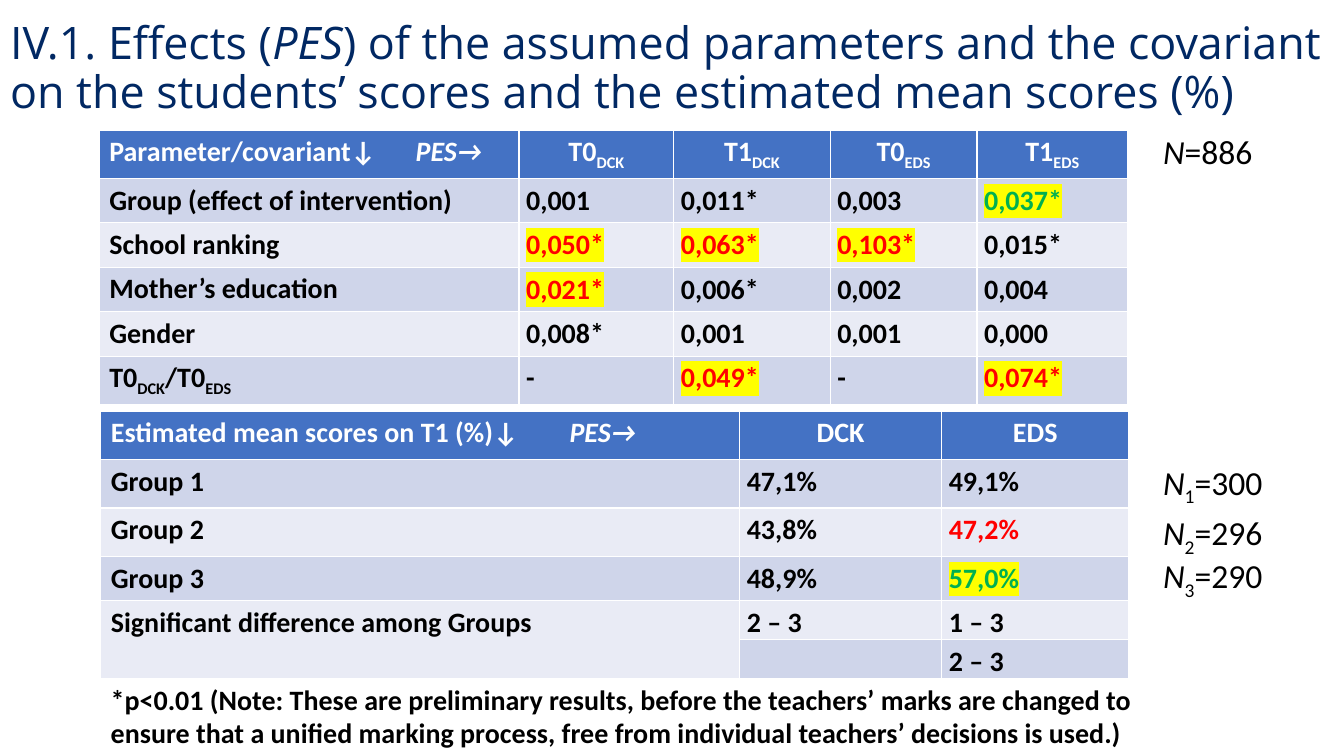
from lxml import etree
from pptx import Presentation
from pptx.dml.color import RGBColor
from pptx.enum.text import MSO_ANCHOR, MSO_AUTO_SIZE as AutoSize, PP_ALIGN as Align
from pptx.oxml.ns import qn
from pptx.util import Cm, Pt

COLORS = {
    "navy": "012863", "header": "4472C4", "band_dark": "CFD5EA", "band_light": "E9EBF5",
    "white": "FFFFFF", "black": "000000", "red": "FF0000", "green": "00B050", "yellow": "FFFF00",
}
ITALIC = {"italic": True}
SUBSCRIPT = {"subscript": True}


def marked(text, color, highlight="yellow"):
    return [(text, {"color": color, "highlight": highlight})]


def score_label(prefix, test):
    return [prefix, (test, SUBSCRIPT)]


def add_run(paragraph, text, size=20, font="Calibri", color="black", bold=False,
            italic=False, subscript=False, highlight=None):
    run = paragraph.add_run()
    run.text = text
    run.font.size = Pt(size)
    run.font.name = font
    run.font.bold = bold
    run.font.italic = italic
    run.font.color.rgb = RGBColor.from_string(COLORS[color])
    properties = run._r.get_or_add_rPr()
    if subscript:
        properties.set("baseline", "-25000")
    if highlight:
        element = etree.Element(qn("a:highlight"))
        etree.SubElement(element, qn("a:srgbClr"), val=COLORS[highlight])
        properties.find(qn("a:solidFill")).addnext(element)


def write_text(frame, parts, align=Align.LEFT, line_spacing=None, space_after=None,
               tab=None, **style):
    paragraph = frame.paragraphs[0]
    paragraph.alignment = align
    if line_spacing:
        paragraph.line_spacing = line_spacing
    if space_after:
        paragraph.space_after = Pt(space_after)
    if tab:
        tabs = etree.SubElement(paragraph._p.get_or_add_pPr(), qn("a:tabLst"))
        etree.SubElement(tabs, qn("a:tab"), pos=str(Cm(tab)), algn="l")
    for part in [parts] if isinstance(parts, str) else parts:
        text, extra = (part, {}) if isinstance(part, str) else part
        add_run(paragraph, text, **{**style, **extra})


def add_title(slide, left, top, width, height):
    title = slide.shapes.title
    title.left, title.top, title.width, title.height = map(Cm, (left, top, width, height))
    frame = title.text_frame
    frame.auto_size = AutoSize.NONE
    frame.vertical_anchor = MSO_ANCHOR.MIDDLE
    parts = ["IV.1. Effects (", ("PES", ITALIC),
             ") of the assumed parameters and the covariant on the students’ scores"
             " and the estimated mean scores (%)"]
    write_text(frame, parts, line_spacing=0.9, size=32, font="Open Sans", color="navy")


def add_label(slide, parts, left, top, width, height, wrap=True, **style):
    box = slide.shapes.add_textbox(Cm(left), Cm(top), Cm(width), Cm(height))
    box.text_frame.word_wrap = wrap
    box.text_frame.auto_size = AutoSize.SHAPE_TO_FIT_TEXT
    write_text(box.text_frame, parts, **style)


def fill_cell(cell, parts, row, column, tab):
    band = "header" if row == 0 else "band_dark" if row % 2 else "band_light"
    cell.fill.solid()
    cell.fill.fore_color.rgb = RGBColor.from_string(COLORS[band])
    if row == 0:
        write_text(cell.text_frame, parts, align=Align.CENTER if column else Align.LEFT,
                   tab=None if column else tab, color="white", bold=True)
        return
    if column or not parts:
        cell.margin_left = cell.margin_right = Cm(0.18)
        cell.margin_top = cell.margin_bottom = 0
    if column:
        write_text(cell.text_frame, parts, line_spacing=1.15, space_after=10, bold=True)
    else:
        write_text(cell.text_frame, parts, bold=True)


def add_score_table(slide, left, top, widths, heights, rows, tab):
    table = slide.shapes.add_table(len(rows), len(widths), Cm(left), Cm(top),
                                   Cm(sum(widths)), Cm(sum(heights))).table
    for column, width in zip(table.columns, widths):
        column.width = Cm(width)
    for table_row, height in zip(table.rows, heights):
        table_row.height = Cm(height)
    for row, values in enumerate(rows):
        for column, parts in enumerate(values):
            fill_cell(table.cell(row, column), parts, row, column, tab)
    return table


def add_effects_table(slide, left, top):
    rows = [
        [["Parameter/covariant↓\t", ("PES→", ITALIC)], score_label("T0", "DCK"),
         score_label("T1", "DCK"), score_label("T0", "EDS"), score_label("T1", "EDS")],
        ["Group (effect of intervention)", "0,001", "0,011*", "0,003", marked("0,037*", "green")],
        ["School ranking", marked("0,050*", "red"), marked("0,063*", "red"),
         marked("0,103*", "red"), "0,015*"],
        ["Mother’s education", marked("0,021*", "red"), "0,006*", "0,002", "0,004"],
        ["Gender", "0,008*", "0,001", "0,001", "0,000"],
        [score_label("T0", "DCK") + score_label("/T0", "EDS"), "-", marked("0,049*", "red"),
         "-", marked("0,074*", "red")],
    ]
    add_score_table(slide, left, top, [10.58, 3.9, 3.94, 3.7, 3.8],
                    [1.2] + [1.12] * 4 + [1.2], rows, tab=7.72)


def add_means_table(slide, left, top):
    rows = [
        [["Estimated mean scores on T1 (%)↓\t", ("PES→", ITALIC)], "DCK", "EDS"],
        ["Group 1", "47,1%", "49,1%"],
        ["Group 2", "43,8%", marked("47,2%", "red", None)],
        ["Group 3", "48,9%", marked("57,0%", "green")],
        ["Significant difference among Groups", "2 – 3", "1 – 3"],
        [[], [], "2 – 3"],
    ]
    table = add_score_table(slide, left, top, [16.1, 5.09, 4.72],
                            [1.22] * 3 + [1.12] + [0.98] * 2, rows, tab=11.56)
    table.cell(4, 0).merge(table.cell(5, 0))


def add_sample_sizes(slide, left, width, height):
    samples = [("", "886", 3.18), ("1", "300", 11.51), ("2", "296", 12.78), ("3", "290", 13.87)]
    for group, count, top in samples:
        index = [(group, SUBSCRIPT)] if group else []
        add_label(slide, [("N", ITALIC), *index, f"={count}"], left, top, width, height, size=24)


def main():
    presentation = Presentation()
    presentation.slide_width, presentation.slide_height = Cm(33.87), Cm(19.05)
    slide = presentation.slides.add_slide(presentation.slide_layouts[5])
    add_title(slide, 0, 0, 34.16, 3.5)
    add_effects_table(slide, 2.5, 3.28)
    add_label(slide, "*p<0.01 (Note: These are preliminary results, before the teachers’ marks"
              " are changed to ensure that a unified marking process, free from individual"
              " teachers’ decisions is used.)", 2.54, 17.07, 27.03, 1.96, bold=True)
    add_means_table(slide, 2.54, 10.36)
    add_sample_sizes(slide, 29.06, 3.2, 1.27)
    presentation.save("out.pptx")


if __name__ == "__main__":
    main()
